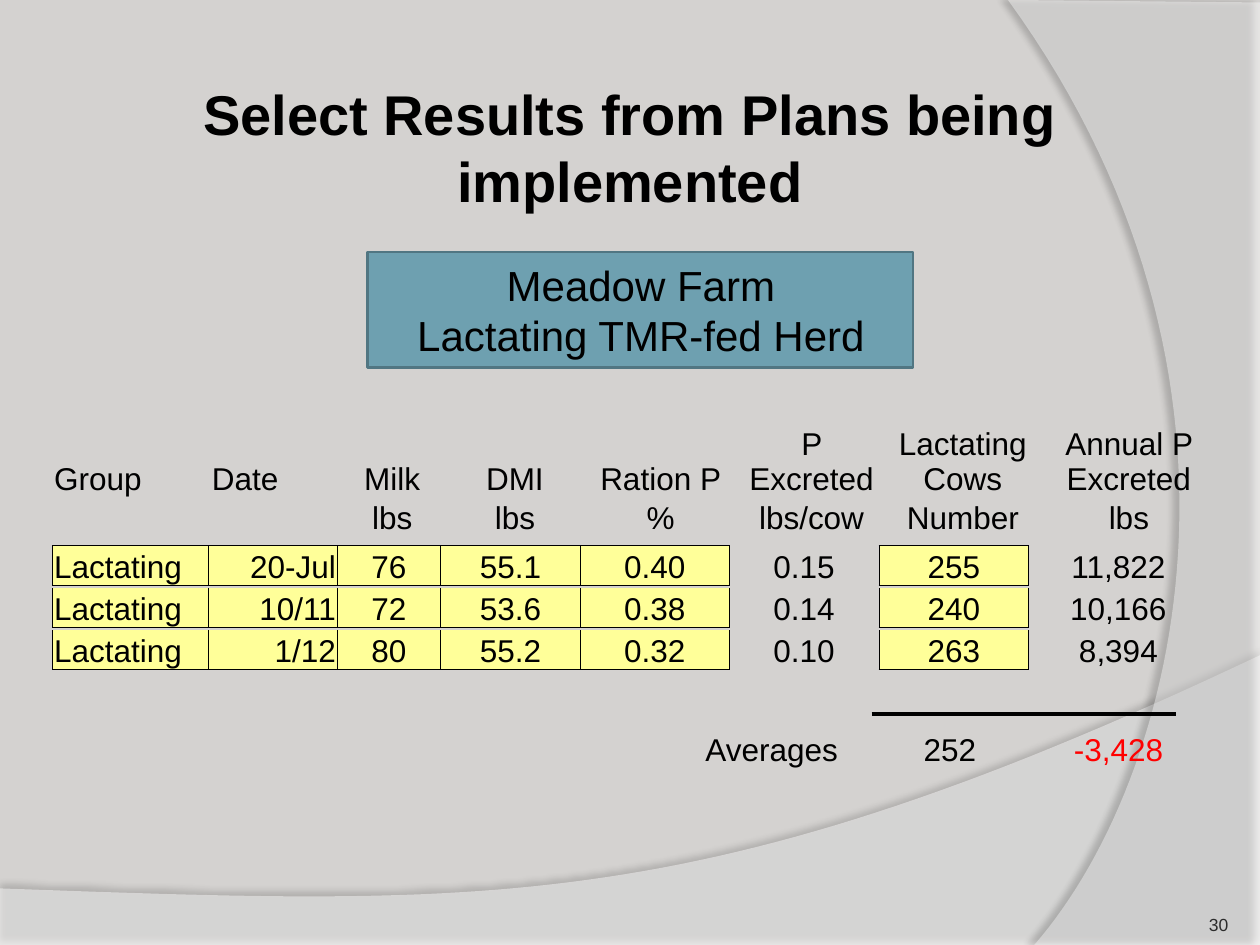
from dataclasses import dataclass

import pptx
import pptx.dml.color
import pptx.enum.shapes
import pptx.enum.text
import pptx.oxml
import pptx.oxml.ns
import pptx.util
from pptx.util import Cm

COLORS = {
    "background": "D4D2D0", "wave": "FFFFFF", "banner": "6EA0B0", "banner_edge": "517682",
    "text": "000000", "negative": "FF0000", "input": "FFFF99", "page": "2C2C2C",
}
FONT = "Arial"
ALIGN = pptx.enum.text.PP_ALIGN
ANCHOR = pptx.enum.text.MSO_ANCHOR
NAMESPACE = pptx.oxml.ns.nsdecls("a")

COLUMN_WIDTHS = [3.15, 2.59, 2.08, 2.82, 3.0, 3.02, 3.02, 3.61]
HEADER_STRETCH = 1.01
INPUT_COLUMNS = {0, 1, 2, 3, 4, 6}
HEADERS = [
    ["Group", "Date", "Milk", "DMI", "Ration P", "P Excreted", "Lactating Cows", "Annual P Excreted"],
    ["", "", "lbs", "lbs", "%", "lbs/cow", "Number", "lbs"],
]
RECORDS = [
    ["Lactating", "20-Jul", "76", "55.1", "0.40", "0.15", "255", "11,822"],
    ["Lactating", "10/11", "72", "53.6", "0.38", "0.14", "240", "10,166"],
    ["Lactating", "1/12", "80", "55.2", "0.32", "0.10", "263", "8,394"],
]


@dataclass
class Label:
    lines: list[str]
    left: float
    top: float
    width: float
    height: float
    size: int = 18
    color: str = "text"
    align: int = ALIGN.CENTER


@dataclass
class Wave:
    before: list[tuple]
    curve: list[tuple]
    after: list[tuple]
    opacity: int
    shadow_opacity: int
    distance: float
    direction: int


LABELS = [
    Label(["Meadow Farm", "Lactating TMR-fed Herd"], 4.88, 5.1, 16.08, 2.31, 24),
    Label(["Averages"], 13.97, 14.6, 3.6, 1.02, align=ALIGN.LEFT),
    Label(["252"], 17.35, 14.6, 3.6, 1.02),
    Label(["-3,428"], 20.75, 14.6, 3.6, 1.02, color="negative"),
]
PAGE_NUMBER = Label(["30"], 22.66, 17.83, 2.1, 1.02, 10, "page", ALIGN.RIGHT)
WAVES = [
    Wave([(0, 17.91), (0, 19.08), (25.4, 19.08)],
         [(25.4, 13.21), (14.2, 18.52), (9.93, 18.26), (0, 17.91)], [], 45, 35, 3.5, 270),
    Wave([(25.4, 0.05), (25.4, 19.05)],
         [(20.85, 19.05), (23.75, 15.72), (25.86, 7.62), (20.32, 0)], [(25.4, 0.05)], 40, 45, 4, 180),
]


def rgb(name: str) -> pptx.dml.color.RGBColor:
    return pptx.dml.color.RGBColor.from_string(COLORS[name])


def add_run(paragraph, text: str, size: int = 18, color: str = "text", bold: bool = False) -> None:
    run = paragraph.add_run()
    run.text = text
    run.font.name, run.font.size, run.font.bold = FONT, pptx.util.Pt(size), bold
    run.font.color.rgb = rgb(color)


def add_label(slide, label: Label):
    shape = slide.shapes.add_textbox(Cm(label.left), Cm(label.top), Cm(label.width), Cm(label.height))
    frame = shape.text_frame
    frame.word_wrap = True
    for index, line in enumerate(label.lines):
        paragraph = frame.add_paragraph() if index else frame.paragraphs[0]
        paragraph.alignment = label.align
        add_run(paragraph, line, label.size, label.color)
    return shape


def bezier(points: list[tuple], steps: int = 60) -> list[tuple]:
    result = []
    for step in range(steps + 1):
        t = step / steps
        weights = [(1 - t) ** 3, 3 * t * (1 - t) ** 2, 3 * t ** 2 * (1 - t), t ** 3]
        result.append(tuple(sum(w * p[axis] for w, p in zip(weights, points)) for axis in (0, 1)))
    return result


def add_wave(slide, wave: Wave) -> None:
    # Whole EMU lengths, since the builder rounds its coordinates
    points = [(Cm(x), Cm(y)) for x, y in wave.before + bezier(wave.curve) + wave.after]
    builder = slide.shapes.build_freeform(*points[0])
    builder.add_line_segments(points[1:], close=True)
    shape = builder.convert_to_shape()
    shape.line.fill.background()
    shape.fill.solid()
    shape.fill.fore_color.rgb = rgb("wave")
    color = shape._element.spPr.find(".//" + pptx.oxml.ns.qn("a:srgbClr"))
    color.append(pptx.oxml.parse_xml(f'<a:alpha {NAMESPACE} val="{wave.opacity * 1000}"/>'))
    # Soft edge shadow
    shape.shadow.inherit = False
    effects = shape._element.spPr.find(pptx.oxml.ns.qn("a:effectLst"))
    effects.append(pptx.oxml.parse_xml(
        f'<a:outerShdw {NAMESPACE} blurRad="{pptx.util.Pt(4)}" dist="{pptx.util.Pt(wave.distance)}" '
        f'dir="{wave.direction * 60000}" algn="ctr" rotWithShape="0"><a:srgbClr val="000000">'
        f'<a:alpha val="{wave.shadow_opacity * 1000}"/></a:srgbClr></a:outerShdw>'))


def set_borders(cell, sides: str) -> None:
    properties = cell._tc.get_or_add_tcPr()
    for index, side in enumerate("LRTB"):
        fill = f'<a:solidFill><a:srgbClr val="{COLORS["text"]}"/></a:solidFill>' if side in sides else "<a:noFill/>"
        properties.insert(index, pptx.oxml.parse_xml(
            f'<a:ln{side} {NAMESPACE} w="{pptx.util.Pt(0.5)}">{fill}</a:ln{side}>'))


def add_grid(slide, rows: list[list[str]], top: float, widths: list[float], heights: list[float],
             input_sides: str = "") -> None:
    """Add a table; input_sides names the borders of its highlighted input cells."""
    table = slide.shapes.add_table(len(rows), len(widths), Cm(1.06), Cm(top),
                                   Cm(sum(widths)), Cm(sum(heights))).table
    table.first_row = table.horz_banding = False
    for column, width in zip(table.columns, widths):
        column.width = Cm(width)
    for row_index, (row, height) in enumerate(zip(rows, heights)):
        table.rows[row_index].height = Cm(height)
        for column_index, text in enumerate(row):
            cell = table.cell(row_index, column_index)
            cell.vertical_anchor = ANCHOR.BOTTOM
            cell.margin_left = cell.margin_right = cell.margin_top = Cm(0.03)
            cell.margin_bottom = 0
            paragraph = cell.text_frame.paragraphs[0]
            if column_index > 1:
                paragraph.alignment = ALIGN.CENTER
            elif column_index == 1 and input_sides:
                paragraph.alignment = ALIGN.RIGHT
            if text:
                add_run(paragraph, text)
            if input_sides and column_index in INPUT_COLUMNS:
                cell.fill.solid()
                cell.fill.fore_color.rgb = rgb("input")
                set_borders(cell, input_sides)
            else:
                cell.fill.background()
                set_borders(cell, {5: "LR", 7: "L"}.get(column_index, "") if input_sides else "")


def main() -> None:
    presentation = pptx.Presentation()
    presentation.slide_width, presentation.slide_height = Cm(25.4), Cm(19.05)
    slide = presentation.slides.add_slide(presentation.slide_layouts[5])
    slide.background.fill.solid()
    slide.background.fill.fore_color.rgb = rgb("background")

    # Background waves
    for wave in WAVES:
        add_wave(slide, wave)

    # Title
    title = slide.shapes.title
    title.left, title.top, title.width, title.height = Cm(0.85), Cm(1.48), Cm(23.7), Cm(3)
    title.text_frame.vertical_anchor = ANCHOR.TOP
    title.text_frame.word_wrap = True
    title.text_frame.paragraphs[0].alignment = ALIGN.CENTER
    add_run(title.text_frame.paragraphs[0], "Select Results from Plans being implemented", 32, bold=True)

    # Farm banner
    banner = slide.shapes.add_shape(pptx.enum.shapes.MSO_SHAPE.RECTANGLE, Cm(7.41), Cm(5.08), Cm(11), Cm(2.33))
    banner.shadow.inherit = False
    banner.fill.solid()
    banner.fill.fore_color.rgb = rgb("banner")
    banner.line.color.rgb = rgb("banner_edge")
    banner.line.width = pptx.util.Pt(1.5)

    # Banner text, averages and page number
    for label in LABELS:
        add_label(slide, label)
    frame = add_label(slide, PAGE_NUMBER).text_frame
    frame.vertical_anchor = ANCHOR.BOTTOM
    frame.margin_left = frame.margin_right = frame.margin_top = frame.margin_bottom = 0

    # Column headings and one table per record
    add_grid(slide, HEADERS, 8.47, [width * HEADER_STRETCH for width in COLUMN_WIDTHS], [1.55, 0.79])
    for index, record in enumerate(RECORDS):
        add_grid(slide, [record], 11 + 0.85 * index, COLUMN_WIDTHS, [0.79], "LRB" if index else "LRTB")

    # Rule above the averages
    rule = slide.shapes.add_connector(pptx.enum.shapes.MSO_CONNECTOR.STRAIGHT,
                                      Cm(17.57), Cm(14.39), Cm(23.7), Cm(14.39))
    rule.line.color.rgb = rgb("text")
    rule.line.width = pptx.util.Pt(2.5)
    rule._element.spPr.append(pptx.oxml.parse_xml(f"<a:effectLst {NAMESPACE}/>"))

    presentation.save("out.pptx")


if __name__ == "__main__":
    main()
